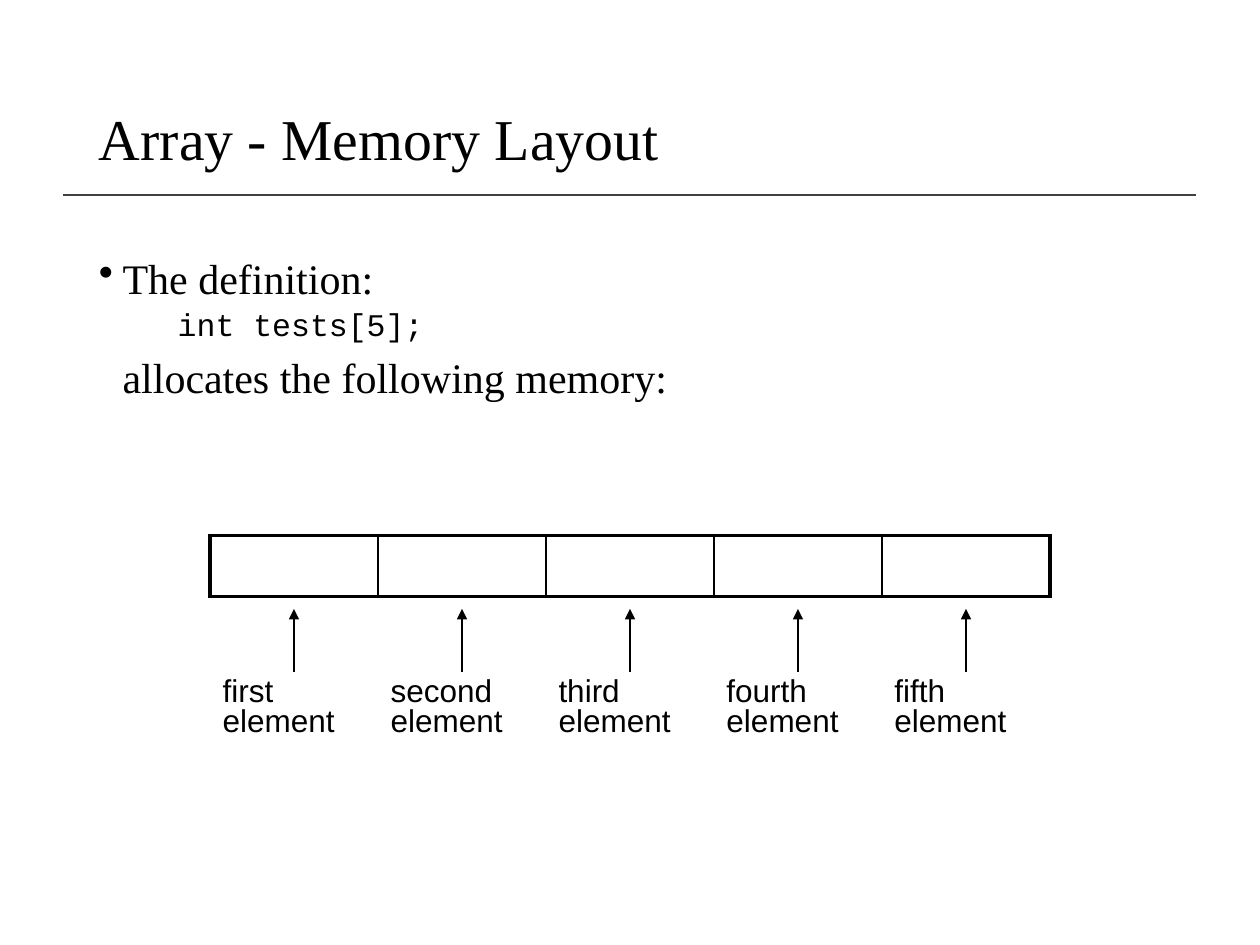
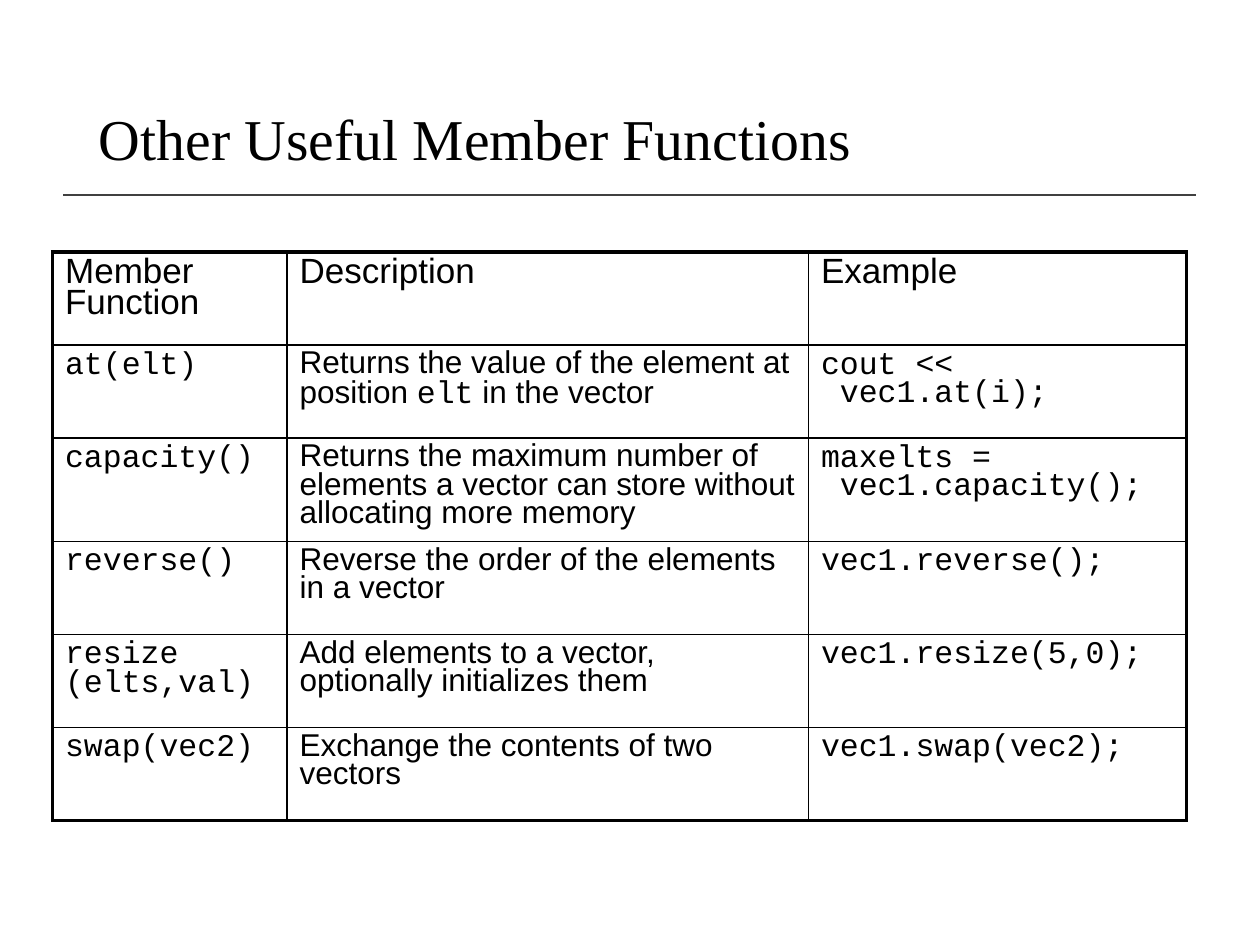
import pptx
import pptx.dml.color
import pptx.enum.shapes
import pptx.enum.text
import pptx.oxml.ns
import pptx.oxml.xmlchemy
import pptx.util
from lxml import etree

Pt = pptx.util.Pt
qn = pptx.oxml.ns.qn

BLACK = pptx.dml.color.RGBColor(0x00, 0x00, 0x00)
RULE_GRAY = pptx.dml.color.RGBColor(0x40, 0x40, 0x40)

SERIF = "Times New Roman"
SANS = "Arial"
CODE = "Courier New"

BLANK_LAYOUT = 6
NO_STYLE_NO_GRID = "{2D5ABB26-0587-4C30-8999-92F81FD0307C}"
THIN, THICK = 1, 2.25

TEXT_LEFT, TEXT_WIDTH = 49.5, 621
ARRAY_LEFT, ARRAY_TOP, ELEMENT_WIDTH = 120, 306, 96
LABEL_TOP, ARROW_TOP = 384, 348
ORDINALS = ["first", "second", "third", "fourth", "fifth"]

# Backticks mark code inside a description.
MEMBER_FUNCTIONS = [
    ("at(elt)", "Returns the value of the element at position `elt` in the vector",
     "cout <<\n vec1.at(i);"),
    ("capacity()", "Returns the maximum number of elements a vector can store "
     "without allocating more memory", "maxelts =\n vec1.capacity();"),
    ("reverse()", "Reverse the order of the elements in a vector", "vec1.reverse();"),
    ("resize\n(elts,val)", "Add elements to a vector, optionally initializes them",
     "vec1.resize(5,0);"),
    ("swap(vec2)", "Exchange the contents of two vectors", "vec1.swap(vec2);"),
]


def style_paragraph(paragraph, font_name, size, line_spacing):
    paragraph.line_spacing = line_spacing
    paragraph.font.name = font_name
    paragraph.font.size = Pt(size)
    paragraph.font.color.rgb = BLACK


def indent_paragraph(paragraph, margin, hanging=0, bullet=None):
    properties = paragraph._p.get_or_add_pPr()
    properties.set("marL", str(Pt(margin)))
    properties.set("indent", str(-Pt(hanging)))
    if bullet:
        etree.SubElement(properties, qn("a:buChar"), char=bullet)


def add_text_box(slide, left, top, width, height):
    box = slide.shapes.add_textbox(Pt(left), Pt(top), Pt(width), Pt(height))
    box.text_frame.word_wrap = True
    return box.text_frame


def add_line(slide, start, end, color, width, arrow=False):
    line = slide.shapes.add_connector(
        pptx.enum.shapes.MSO_CONNECTOR.STRAIGHT, *map(Pt, start + end))
    line.line.color.rgb = color
    line.line.width = Pt(width)
    if arrow:
        etree.SubElement(line.line._get_or_add_ln(), qn("a:tailEnd"), type="triangle")
    etree.SubElement(line._element.spPr, qn("a:effectLst"))


def add_titled_slide(presentation, title):
    slide = presentation.slides.add_slide(presentation.slide_layouts[BLANK_LAYOUT])
    add_line(slide, (36, 111.6), (683.3, 111.6), RULE_GRAY, 1)
    text_frame = add_text_box(slide, TEXT_LEFT, 28.75, TEXT_WIDTH, 104.4)
    text_frame.vertical_anchor = pptx.enum.text.MSO_ANCHOR.MIDDLE
    paragraph = text_frame.paragraphs[0]
    paragraph.text = title
    style_paragraph(paragraph, SERIF, 33, 0.9)
    return slide


def add_plain_table(slide, left, top, column_widths, row_heights):
    """Add a table without style, grid or fill."""
    frame = slide.shapes.add_table(
        len(row_heights), len(column_widths), Pt(left), Pt(top),
        Pt(sum(column_widths)), Pt(sum(row_heights)))
    table = frame.table
    table.first_row = table.horz_banding = False
    next(frame._element.iter(qn("a:tableStyleId"))).text = NO_STYLE_NO_GRID
    for column, width in zip(table.columns, column_widths):
        column.width = Pt(width)
    for row, height in zip(table.rows, row_heights):
        row.height = Pt(height)
    for cell in table.iter_cells():
        cell.fill.background()
    return table


def draw_grid(table):
    """Give the table thin inner borders and a thick frame."""
    last_row, last_column = len(table.rows) - 1, len(table.columns) - 1
    for row in range(last_row + 1):
        for column in range(last_column + 1):
            on_frame = {"lnL": column == 0, "lnR": column == last_column,
                        "lnT": row == 0, "lnB": row == last_row}
            properties = table.cell(row, column)._tc.get_or_add_tcPr()
            for position, (side, is_outer) in enumerate(on_frame.items()):
                width = THICK if is_outer else THIN
                border = etree.Element(qn(f"a:{side}"), w=str(Pt(width)))
                fill = etree.SubElement(border, qn("a:solidFill"))
                etree.SubElement(fill, qn("a:srgbClr"), val=str(BLACK))
                properties.insert(position, border)


def fill_cell(cell, text, font_name, size, line_spacing):
    """Write one paragraph per line, with text between backticks as code."""
    for index, line in enumerate(text.split("\n")):
        text_frame = cell.text_frame
        paragraph = text_frame.add_paragraph() if index else text_frame.paragraphs[0]
        style_paragraph(paragraph, font_name, size, line_spacing)
        for part, words in enumerate(line.split("`")):
            run = paragraph.add_run()
            run.text = words
            if part % 2:
                run.font.name = CODE


def add_definition(slide):
    text_frame = add_text_box(slide, TEXT_LEFT, 143.75, TEXT_WIDTH, 342.7)
    lines = [
        ("The definition:", SERIF, 24, 7.5, (13.5, 13.5, "•")),
        ("int tests[5];", CODE, 18, 3.8, (45,)),
        ("allocates the following memory:", SERIF, 24, 7.5, (13.5,)),
    ]
    for index, (text, font_name, size, space_before, indent) in enumerate(lines):
        paragraph = text_frame.add_paragraph() if index else text_frame.paragraphs[0]
        paragraph.text = text
        indent_paragraph(paragraph, *indent)
        paragraph.space_before = Pt(space_before)
        style_paragraph(paragraph, font_name, size, 0.9)


def add_memory_diagram(slide):
    widths = [ELEMENT_WIDTH] * len(ORDINALS)
    draw_grid(add_plain_table(slide, ARRAY_LEFT, ARRAY_TOP, widths, [35]))
    labels = add_plain_table(slide, ARRAY_LEFT, LABEL_TOP, widths, [66])
    for index, ordinal in enumerate(ORDINALS):
        fill_cell(labels.cell(0, index), f"{ordinal} element", SANS, 18, 0.85)
        center = ARRAY_LEFT + (index + 0.5) * ELEMENT_WIDTH
        add_line(slide, (center, LABEL_TOP), (center, ARROW_TOP), BLACK, 0.75, arrow=True)


def add_function_table(slide):
    row_heights = [53.2, 53.2, 59, 53.2, 53.2, 53.2]
    table = add_plain_table(slide, 30, 144, [134, 298, 216], row_heights)
    draw_grid(table)
    for column, heading in enumerate(["Member\nFunction", "Description", "Example"]):
        fill_cell(table.cell(0, column), heading, SANS, 20, 0.8)
    for row, texts in enumerate(MEMBER_FUNCTIONS, start=1):
        for column, (text, font_name) in enumerate(zip(texts, (CODE, SANS, CODE))):
            fill_cell(table.cell(row, column), text, font_name, 18, 0.8)


def main():
    presentation = pptx.Presentation()
    presentation.slide_width = Pt(720)
    presentation.slide_height = Pt(540)

    layout_slide = add_titled_slide(presentation, "Array - Memory Layout")
    add_definition(layout_slide)
    add_memory_diagram(layout_slide)

    functions_slide = add_titled_slide(presentation, "Other Useful Member Functions")
    add_function_table(functions_slide)

    presentation.save("out.pptx")


if __name__ == "__main__":
    main()
